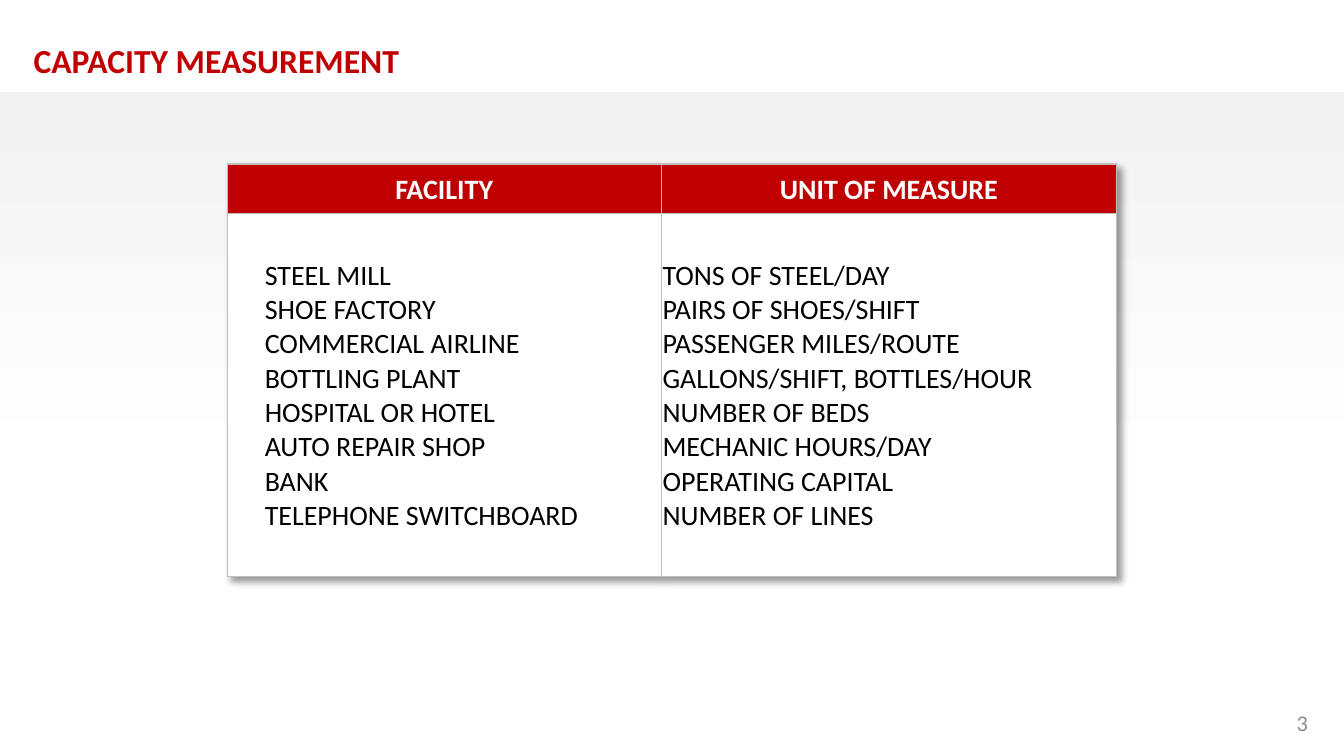
from lxml.etree import SubElement as Sub
from pptx import Presentation
from pptx.dml.color import RGBColor as Rgb
from pptx.enum.shapes import MSO_SHAPE as Shape
from pptx.enum.text import MSO_ANCHOR as Anchor, MSO_AUTO_SIZE as Fit, PP_ALIGN as Align
from pptx.oxml.ns import qn
from pptx.util import Inches, Pt

HUE = {"red": "C00000", "white": "FFFFFF", "black": "000000",
       "pale": "F2F2F2", "grey": "8C8C8C", "rule": "BFBFBF"}
HEADS = ["FACILITY", "UNIT OF MEASURE"]
PAIRS = [
    ("STEEL MILL", "TONS OF STEEL/DAY"),
    ("SHOE FACTORY", "PAIRS OF SHOES/SHIFT"),
    ("COMMERCIAL AIRLINE", "PASSENGER MILES/ROUTE"),
    ("BOTTLING PLANT", "GALLONS/SHIFT, BOTTLES/HOUR"),
    ("HOSPITAL OR HOTEL", "NUMBER OF BEDS"),
    ("AUTO REPAIR SHOP", "MECHANIC HOURS/DAY"),
    ("BANK", "OPERATING CAPITAL"),
    ("TELEPHONE SWITCHBOARD", "NUMBER OF LINES"),
]


def write(frame, text, size=15, hue="black", bold=False, align=Align.LEFT):
    """Fill a text frame, one paragraph for each line of text."""
    frame.text = text
    for para in frame.paragraphs:
        para.alignment = align
        for run in para.runs:
            font = run.font
            font.name, font.size, font.bold = "Calibri", Pt(size), bold
            font.color.rgb = Rgb.from_string(HUE[hue])


# A wide slide, 16 to 9
deck = Presentation()
wide = Inches(10)
high = wide * 9 // 16
deck.slide_width, deck.slide_height = wide, high
slide = deck.slides.add_slide(deck.slide_layouts[5])
shapes = slide.shapes

# Shaded backdrop below the title band
tall = Inches(4.94)
back = shapes.add_shape(Shape.RECTANGLE, Inches(-0.01), high - tall, Inches(10.01), tall)
back.shadow.inherit = False
back.line.fill.background()
back.fill.gradient()
back.fill.gradient_angle = 270
for stop, hue, place in zip(back.fill.gradient_stops, ("pale", "white"), (0, 0.58)):
    stop.color.rgb = Rgb.from_string(HUE[hue])
    stop.position = place

# Title
title = shapes.title
title.left, title.top = Inches(0.15), Inches(0.25)
title.width, title.height = Inches(3.37), Inches(0.4)
write(title.text_frame, "CAPACITY MEASUREMENT", size=18, hue="red", bold=True)
title.text_frame.word_wrap = False
title.text_frame.auto_size = Fit.NONE
title.text_frame.vertical_anchor = Anchor.MIDDLE

# Page number
page = shapes.add_textbox(wide * 3 // 4, Inches(5.23), Inches(2.33), Inches(0.3))
write(page.text_frame, "3", size=12, hue="grey", align=Align.RIGHT)
page.text_frame.word_wrap = True
page.text_frame.vertical_anchor = Anchor.MIDDLE

# Table grid
cols, rows = (3.23, 3.39), (0.37, 2.7)
grid = shapes.add_table(2, 2, Inches(1.69), Inches(1.22),
                        Inches(sum(cols)), Inches(sum(rows))).table
for i in range(2):
    grid.columns[i].width = Inches(cols[i])
    grid.rows[i].height = Inches(rows[i])

# Table text: one heading and one list of lines in each column
for c, (head, lines) in enumerate(zip(HEADS, zip(*PAIRS))):
    write(grid.cell(0, c).text_frame, head, hue="white", bold=True, align=Align.CENTER)
    write(grid.cell(1, c).text_frame, "\n".join(lines))

# Cell margins, borders and fills
for r in range(2):
    for c in range(2):
        cell = grid.cell(r, c)
        cell.vertical_anchor = Anchor.MIDDLE
        cell.margin_left = Inches(0.28 if (r, c) == (1, 0) else 0.01)
        cell.margin_right = cell.margin_top = Inches(0.01)
        cell.margin_bottom = 0
        props = cell._tc.get_or_add_tcPr()
        for side in ("a:lnL", "a:lnR", "a:lnT", "a:lnB"):
            line = Sub(props, qn(side), w=str(Pt(0.75)))
            Sub(Sub(line, qn("a:solidFill")), qn("a:srgbClr"), val=HUE["rule"])
        cell.fill.solid()
        cell.fill.fore_color.rgb = Rgb.from_string(HUE["white" if r else "red"])

# Soft shadow towards the lower right
look = grid._tbl.tblPr
effect = look.makeelement(qn("a:effectLst"))
look.insert(0, effect)
shade = Sub(effect, qn("a:outerShdw"), blurRad=str(Pt(4)), dist=str(Pt(3)),
            dir="2700000", algn="tl", rotWithShape="0")
tint = Sub(shade, qn("a:srgbClr"), val=HUE["black"])
Sub(tint, qn("a:alpha"), val="40000")

deck.save("out.pptx")
